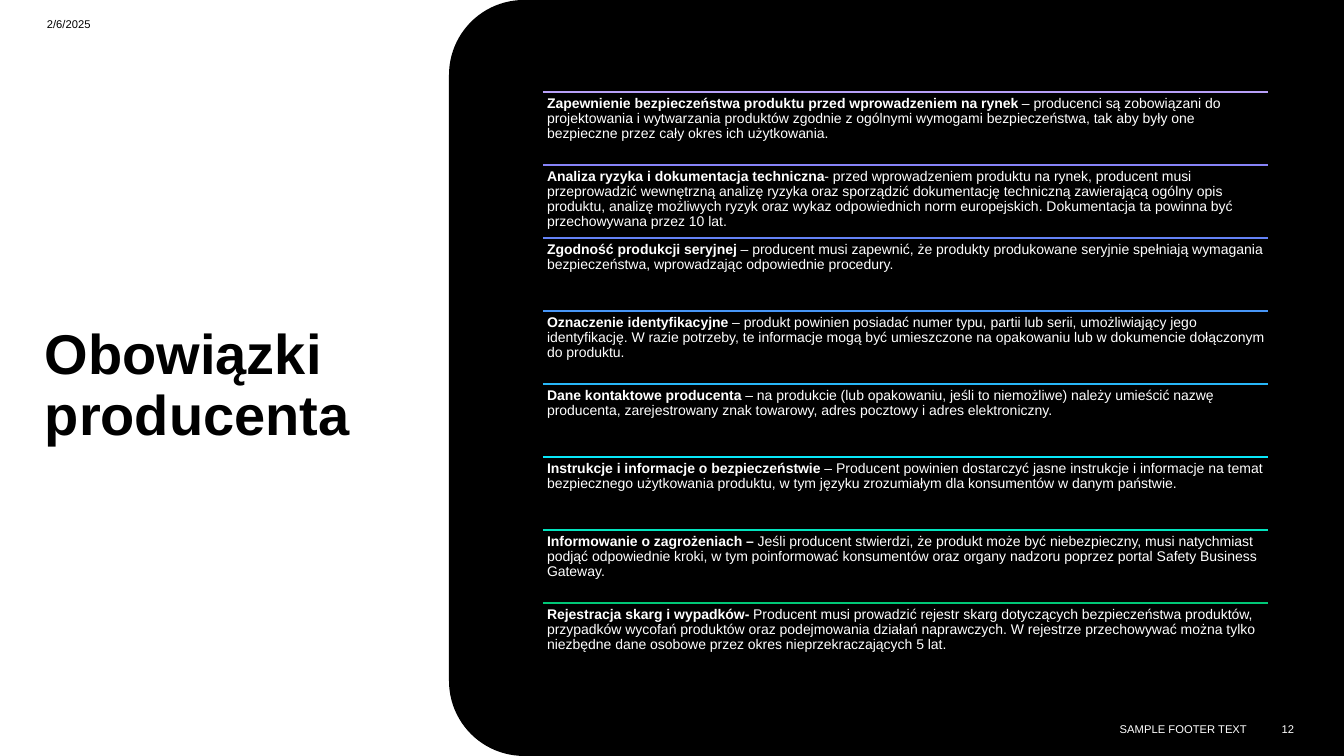
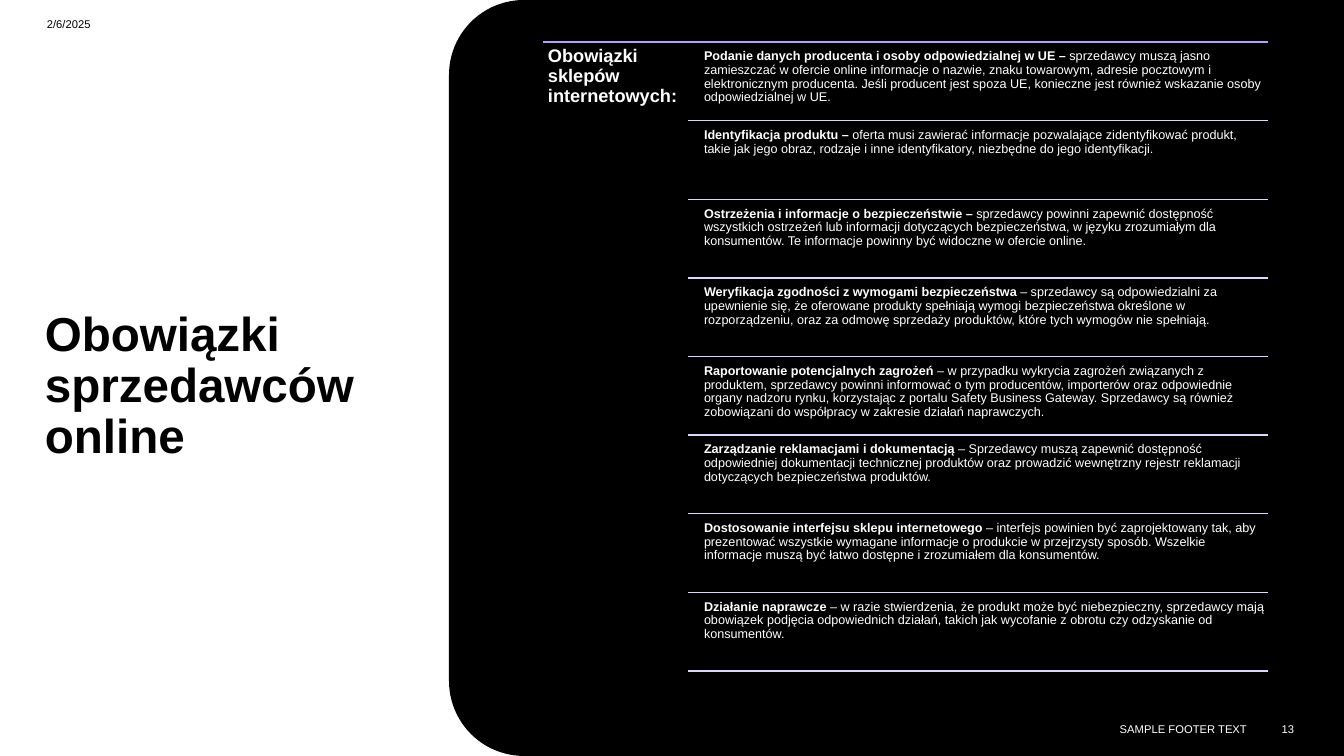
from math import cos, pi, sin

from lxml import etree
from pptx import Presentation
from pptx.dml.color import RGBColor
from pptx.enum.shapes import MSO_CONNECTOR
from pptx.enum.text import MSO_ANCHOR, PP_ALIGN
from pptx.oxml.ns import qn
from pptx.util import Pt

STRAIGHT = MSO_CONNECTOR.STRAIGHT
TOP, MIDDLE = MSO_ANCHOR.TOP, MSO_ANCHOR.MIDDLE
LEFT, RIGHT, JUSTIFY = PP_ALIGN.LEFT, PP_ALIGN.RIGHT, PP_ALIGN.JUSTIFY

# Lengths are in px, 100.8 to the inch
PX = 914400 / 100.8
SLIDE_WIDTH, SLIDE_HEIGHT = 1344, 756
PANEL_LEFT, PANEL_RADIUS, ARC_STEPS = 449, 75, 24
LIST_LEFT, LIST_RIGHT = 543, 1268

FONT = "Arial"
BLACK = RGBColor(0x00, 0x00, 0x00)
WHITE = RGBColor(0xFF, 0xFF, 0xFF)
LAVENDER = RGBColor(0xB8, 0xA0, 0xF8)
PALE_LAVENDER = RGBColor(0xDF, 0xD6, 0xFC)
RULE_COLORS = [
    LAVENDER,
    RGBColor(0x87, 0x83, 0xF7),
    RGBColor(0x65, 0x83, 0xF7),
    RGBColor(0x47, 0x96, 0xF7),
    RGBColor(0x28, 0xB7, 0xF8),
    RGBColor(0x09, 0xE8, 0xFA),
    RGBColor(0x02, 0xE3, 0xBE),
    RGBColor(0x00, 0xC7, 0x77),
]

# Each duty is a bold lead and the text that follows it
PRODUCER_DUTIES = [
    ("Zapewnienie bezpieczeństwa produktu przed wprowadzeniem na rynek",
     " – producenci są zobowiązani do projektowania i wytwarzania produktów zgodnie z ogólnymi "
     "wymogami bezpieczeństwa, tak aby były one bezpieczne przez cały okres ich użytkowania."),
    ("Analiza ryzyka i dokumentacja techniczna",
     "- przed wprowadzeniem produktu na rynek, producent musi przeprowadzić wewnętrzną analizę "
     "ryzyka oraz sporządzić dokumentację techniczną zawierającą ogólny opis produktu, analizę "
     "możliwych ryzyk oraz wykaz odpowiednich norm europejskich. Dokumentacja ta powinna być "
     "przechowywana przez 10 lat."),
    ("Zgodność produkcji seryjnej ",
     "– producent musi zapewnić, że produkty produkowane seryjnie spełniają wymagania "
     "bezpieczeństwa, wprowadzając odpowiednie procedury."),
    ("Oznaczenie identyfikacyjne ",
     "– produkt powinien posiadać numer typu, partii lub serii, umożliwiający jego "
     "identyfikację. W razie potrzeby, te informacje mogą być umieszczone na opakowaniu lub "
     "w dokumencie dołączonym do produktu."),
    ("Dane kontaktowe producenta ",
     "– na produkcie (lub opakowaniu, jeśli to niemożliwe) należy umieścić nazwę producenta, "
     "zarejestrowany znak towarowy, adres pocztowy i adres elektroniczny."),
    ("Instrukcje i informacje o bezpieczeństwie",
     " – Producent powinien dostarczyć jasne instrukcje i informacje na temat bezpiecznego "
     "użytkowania produktu, w tym języku zrozumiałym dla konsumentów w danym państwie."),
    ("Informowanie o zagrożeniach – ",
     "Jeśli producent stwierdzi, że produkt może być niebezpieczny, musi natychmiast podjąć "
     "odpowiednie kroki, w tym poinformować konsumentów oraz organy nadzoru poprzez portal "
     "Safety Business Gateway."),
    ("Rejestracja skarg i wypadków-",
     " Producent musi prowadzić rejestr skarg dotyczących bezpieczeństwa produktów, przypadków "
     "wycofań produktów oraz podejmowania działań naprawczych. W rejestrze przechowywać można "
     "tylko niezbędne dane osobowe przez okres nieprzekraczających 5 lat."),
]
SELLER_DUTIES = [
    ("Podanie danych producenta i osoby odpowiedzialnej w UE – ",
     "sprzedawcy muszą jasno zamieszczać w ofercie online informacje o nazwie, znaku towarowym, "
     "adresie pocztowym i elektronicznym producenta. Jeśli producent jest spoza UE, konieczne "
     "jest również wskazanie osoby odpowiedzialnej w UE."),
    ("Identyfikacja produktu –",
     " oferta musi zawierać informacje pozwalające zidentyfikować produkt, takie jak jego "
     "obraz, rodzaje i inne identyfikatory, niezbędne do jego identyfikacji."),
    ("Ostrzeżenia i informacje o bezpieczeństwie –",
     " sprzedawcy powinni zapewnić dostępność wszystkich ostrzeżeń lub informacji dotyczących "
     "bezpieczeństwa, w języku zrozumiałym dla konsumentów. Te informacje powinny być widoczne "
     "w ofercie online."),
    ("Weryfikacja zgodności z wymogami bezpieczeństwa ",
     "– sprzedawcy są odpowiedzialni za upewnienie się, że oferowane produkty spełniają wymogi "
     "bezpieczeństwa określone w rozporządzeniu, oraz za odmowę sprzedaży produktów, które tych "
     "wymogów nie spełniają."),
    ("Raportowanie potencjalnych zagrożeń ",
     "– w przypadku wykrycia zagrożeń związanych z produktem, sprzedawcy powinni informować "
     "o tym producentów, importerów oraz odpowiednie organy nadzoru rynku, korzystając z portalu "
     "Safety Business Gateway. Sprzedawcy są również zobowiązani do współpracy w zakresie "
     "działań naprawczych."),
    ("Zarządzanie reklamacjami i dokumentacją ",
     "– Sprzedawcy muszą zapewnić dostępność odpowiedniej dokumentacji technicznej produktów "
     "oraz prowadzić wewnętrzny rejestr reklamacji dotyczących bezpieczeństwa produktów."),
    ("Dostosowanie interfejsu sklepu internetowego ",
     "– interfejs powinien być zaprojektowany tak, aby prezentować wszystkie wymagane "
     "informacje o produkcie w przejrzysty sposób. Wszelkie informacje muszą być łatwo dostępne "
     "i zrozumiałem dla konsumentów."),
    ("Działanie naprawcze ",
     "– w razie stwierdzenia, że produkt może być niebezpieczny, sprzedawcy mają obowiązek "
     "podjęcia odpowiednich działań, takich jak wycofanie z obrotu czy odzyskanie od "
     "konsumentów."),
]


def add_text(slide, box, runs, size, color=WHITE, align=LEFT, anchor=TOP, inset=None, spacing=0.9):
    """Add a text box; runs are (text, bold) pairs, box and inset are in px."""
    shape = slide.shapes.add_textbox(*[round(length * PX) for length in box])
    frame = shape.text_frame
    frame.word_wrap = True
    frame.vertical_anchor = anchor
    if inset is not None:
        frame.margin_left = frame.margin_right = round(inset * PX)
        frame.margin_top = frame.margin_bottom = round(inset * PX)
    paragraph = frame.paragraphs[0]
    paragraph.alignment = align
    paragraph.line_spacing = spacing
    for text, bold in runs:
        run = paragraph.add_run()
        run.text = text
        run.font.name = FONT
        run.font.size = Pt(size)
        run.font.bold = bold
        run.font.color.rgb = color


def add_rule(slide, left, y, color):
    """Add a horizontal rule from left to the right edge of the list."""
    rule = slide.shapes.add_connector(
        STRAIGHT, round(left * PX), round(y * PX), round(LIST_RIGHT * PX), round(y * PX))
    rule.line.color.rgb = color
    rule.line.width = Pt(1)
    etree.SubElement(rule._element.spPr, qn("a:effectLst"))


presentation = Presentation()
presentation.slide_width = round(SLIDE_WIDTH * PX)
presentation.slide_height = round(SLIDE_HEIGHT * PX)
blank_layout = presentation.slide_layouts[6]

# Panel outline: two rounded corners on the left, square on the right
arc_center = PANEL_LEFT + PANEL_RADIUS
panel_points = [(SLIDE_WIDTH, 0), (SLIDE_WIDTH, SLIDE_HEIGHT)]
for center_y, start_angle in [(SLIDE_HEIGHT - PANEL_RADIUS, pi / 2), (PANEL_RADIUS, pi)]:
    for step in range(ARC_STEPS + 1):
        angle = start_angle + step / ARC_STEPS * pi / 2
        panel_points.append((arc_center + PANEL_RADIUS * cos(angle),
                             center_y + PANEL_RADIUS * sin(angle)))
panel_points = [(round(x * PX), round(y * PX)) for x, y in panel_points]

# Frame of both slides: background, title, date, panel, footer, number
slides = []
for title, title_size, title_align, number in [
    ("Obowiązki producenta", 40, LEFT, "12"),
    ("Obowiązki sprzedawców online", 34, JUSTIFY, "13"),
]:
    slide = presentation.slides.add_slide(blank_layout)
    slides.append(slide)
    slide.background.fill.solid()
    slide.background.fill.fore_color.rgb = WHITE

    add_text(slide, (35, 91, 356, 592), [(title, True)], title_size, BLACK, title_align, MIDDLE)
    add_text(slide, (37, 7, 302, 35), [("2/6/2025", False)], 8, BLACK, anchor=MIDDLE, spacing=1.0)

    builder = slide.shapes.build_freeform(*panel_points[0])
    builder.add_line_segments(panel_points[1:], close=True)
    panel = builder.convert_to_shape()
    panel.shadow.inherit = False
    panel.fill.solid()
    panel.fill.fore_color.rgb = BLACK
    panel.line.fill.background()

    for left, width, text in [(809, 448, "SAMPLE FOOTER TEXT"), (1257, 47, number)]:
        add_text(slide, (left, 709, width, 40), [(text, False)], 8,
                 align=RIGHT, anchor=MIDDLE, spacing=1.0)

producer_slide, seller_slide = slides

# Producer duties: a coloured rule above each one
PRODUCER_TOP, PRODUCER_PITCH = 92, 73
for row, (lead, detail) in enumerate(PRODUCER_DUTIES):
    y = PRODUCER_TOP + row * PRODUCER_PITCH
    add_rule(producer_slide, LIST_LEFT, y, RULE_COLORS[row])
    add_text(producer_slide, (LIST_LEFT, y, LIST_RIGHT - LIST_LEFT, PRODUCER_PITCH),
             [(lead, True), (detail, False)], 10, inset=4)

# Seller duties: a heading column, then a pale rule below each duty
SELLER_TOP, SELLER_HEIGHT = 42, 629
HEADING_WIDTH, DUTY_LEFT = 145, 700
add_rule(seller_slide, LIST_LEFT, SELLER_TOP, LAVENDER)
add_text(seller_slide, (LIST_LEFT, SELLER_TOP, HEADING_WIDTH, SELLER_HEIGHT),
         [("Obowiązki sklepów internetowych:", True)], 13, inset=5)
seller_pitch = SELLER_HEIGHT / len(SELLER_DUTIES)
for row, (lead, detail) in enumerate(SELLER_DUTIES):
    y = SELLER_TOP + row * seller_pitch
    add_text(seller_slide, (DUTY_LEFT, y + 4, LIST_RIGHT - DUTY_LEFT, 75),
             [(lead, True), (detail, False)], 9, inset=4)
    add_rule(seller_slide, LIST_LEFT + HEADING_WIDTH, y + seller_pitch, PALE_LAVENDER)

presentation.save("out.pptx")
